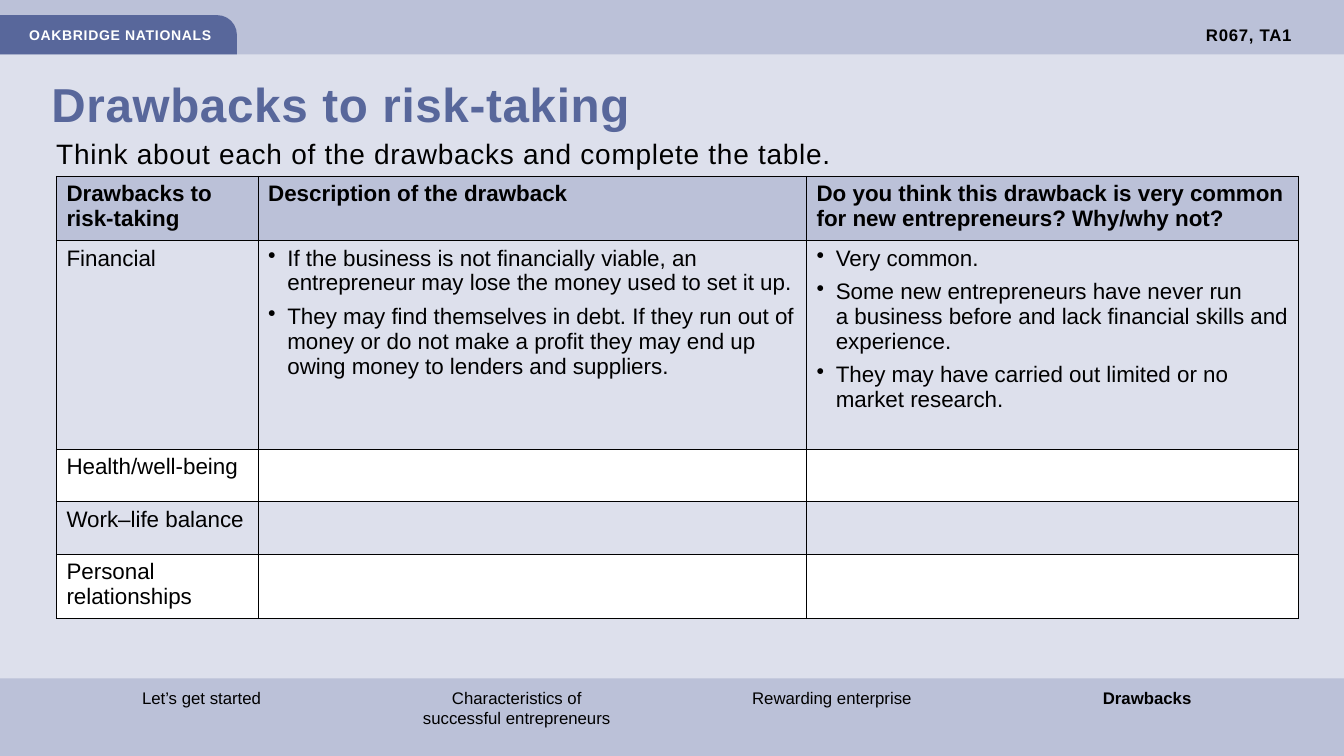
"""Builds the slide on the drawbacks to risk-taking."""
from dataclasses import dataclass

from lxml import etree
from pptx import Presentation
from pptx import util as u
from pptx.dml.color import RGBColor
from pptx.enum import shapes, text
from pptx.oxml.ns import qn


@dataclass(frozen=True)
class Theme:
    """Colours, font and type sizes."""
    page: str = "DDE0EC"
    band: str = "BBC1D8"
    accent: str = "58679B"
    ink: str = "000000"
    white: str = "FFFFFF"
    font: str = "Arial"
    title: int = 34
    lead: int = 20
    table: int = 16
    label: int = 12
    tab: int = 10
    spacing: float = 0.5
    border: int = 1


THEME = Theme()
LEFT, CENTER, RIGHT = text.PP_ALIGN.LEFT, text.PP_ALIGN.CENTER, text.PP_ALIGN.RIGHT


def write(frame, *lines, size, color=THEME.ink, bold=False, align=LEFT, indent=0, hanging=0,
          bullet=None, line_spacing=None, before=None, after=None, spacing=0):
    """Fill a text frame with one formatted paragraph per line."""
    for number, line in enumerate(lines):
        paragraph = frame.add_paragraph() if number else frame.paragraphs[0]
        paragraph.text = line
        paragraph.alignment = align
        paragraph.line_spacing = line_spacing
        paragraph.space_before = None if before is None else u.Pt(before)
        paragraph.space_after = None if after is None else u.Pt(after)
        properties = paragraph._p.get_or_add_pPr()
        properties.set("marL", str(u.Inches(indent)))
        properties.set("indent", str(u.Inches(-hanging)))
        if bullet:
            etree.SubElement(properties, qn("a:buChar")).set("char", bullet)
        for run in paragraph.runs:
            run.font.name = THEME.font
            run.font.size = u.Pt(size)
            run.font.bold = bold
            run.font.color.rgb = RGBColor.from_string(color)
            if spacing:
                run._r.get_or_add_rPr().set("spc", str(round(spacing * 100)))


class SlideBuilder:
    """Holds the theme and the current slide."""

    def __init__(self, deck, theme):
        """Add a title-only slide with the page colour."""
        self.theme = theme
        self.slide = deck.slides.add_slide(deck.slide_layouts[5])
        self.paint(self.slide.background.fill, theme.page)

    def paint(self, fill, color):
        """Make a fill solid."""
        fill.solid()
        fill.fore_color.rgb = RGBColor.from_string(color)

    def block(self, kind, box, color):
        """Add a filled shape without an outline."""
        shape = self.slide.shapes.add_shape(kind, *map(u.Inches, box))
        shape.shadow.inherit = False
        self.paint(shape.fill, color)
        shape.line.fill.background()
        return shape

    def title(self, words, box):
        """Place and format the title placeholder."""
        heading = self.slide.shapes.title
        heading.left, heading.top, heading.width, heading.height = map(u.Inches, box)
        frame = heading.text_frame
        frame.vertical_anchor = text.MSO_ANCHOR.TOP
        frame.auto_size = text.MSO_AUTO_SIZE.NONE
        write(frame, words, size=self.theme.title, color=self.theme.accent, bold=True,
              line_spacing=1.1, spacing=self.theme.spacing)

    def label(self, words, box, anchor=text.MSO_ANCHOR.TOP, **style):
        """Add a wrapping text box."""
        frame = self.slide.shapes.add_textbox(*map(u.Inches, box)).text_frame
        frame.word_wrap = True
        frame.vertical_anchor = anchor
        write(frame, words, **style)

    def outline(self, cell):
        """Draw the four borders of a table cell."""
        properties = cell._tc.get_or_add_tcPr()
        for position, side in enumerate(("a:lnL", "a:lnR", "a:lnT", "a:lnB")):
            edge = etree.Element(qn(side), w=str(u.Pt(self.theme.border)))
            fill = etree.SubElement(edge, qn("a:solidFill"))
            etree.SubElement(fill, qn("a:srgbClr")).set("val", self.theme.ink)
            properties.insert(position, edge)

    def table(self, rows, box, widths, heights, fills):
        """Add a bordered table; a cell given as a list is bulleted."""
        grid = self.slide.shapes.add_table(len(rows), len(widths), *map(u.Inches, box)).table
        for column, width in zip(grid.columns, widths):
            column.width = u.Inches(width)
        for row, height in zip(grid.rows, heights):
            row.height = u.Inches(height)
        for r, entries in enumerate(rows):
            for c, entry in enumerate(entries):
                cell = grid.cell(r, c)
                self.paint(cell.fill, fills[r])
                self.outline(cell)
                if isinstance(entry, list):
                    write(cell.text_frame, *entry, size=self.theme.table, indent=0.19,
                          hanging=0.19, bullet="•", after=6)
                else:
                    write(cell.text_frame, entry, size=self.theme.table, bold=r == 0)


DRAWBACKS = [
    ("Drawbacks to risk-taking", "Description of the drawback",
     "Do you think this drawback is very common for new entrepreneurs? Why/why not?"),
    ("Financial",
     ["If the business is not financially viable, an entrepreneur may lose the money used "
      "to set it up.",
      "They may find themselves in debt. If they run out of money or do not make a profit "
      "they may end up owing money to lenders and suppliers."],
     ["Very common.",
      "Some new entrepreneurs have never run \va business before and lack financial skills "
      "and experience.",
      "They may have carried out limited or no market research."]),
    ("Health/well-being", "", ""),
    ("Work–life balance", "", ""),
    ("Personal relationships", "", ""),
]
SECTIONS = ["Let’s get started", "Characteristics of successful entrepreneurs",
            "Rewarding enterprise", "Drawbacks"]


def main():
    """Build and save the deck."""
    deck = Presentation()
    deck.slide_width, deck.slide_height = u.Inches(13.33), u.Inches(7.5)
    page = SlideBuilder(deck, THEME)
    middle = text.MSO_ANCHOR.MIDDLE

    page.block(shapes.MSO_SHAPE.RECTANGLE, (-0.01, 0, 13.35, 0.54), THEME.band)
    page.block(shapes.MSO_SHAPE.RECTANGLE, (0, 6.73, 13.35, 0.77), THEME.band)
    tab = page.block(shapes.MSO_SHAPE.ROUND_1_RECTANGLE, (-0.01, 0.15, 2.36, 0.39), THEME.accent)
    tab.adjustments[0] = 0.5
    page.label("OAKBRIDGE NATIONALS", (-0.01, 0.15, 2.6, 0.39), middle, size=THEME.tab,
               color=THEME.white, bold=True, indent=0.2, spacing=THEME.spacing)
    page.label("R067, TA1", (10.31, 0.15, 2.6, 0.39), middle, size=THEME.label, bold=True,
               align=RIGHT, spacing=THEME.spacing)

    page.title("Drawbacks to risk-taking", (0.41, 0.64, 6.88, 0.74))
    page.table(DRAWBACKS, (0.56, 1.75, 12.32, 4.38), widths=(2, 5.44, 4.88),
               heights=(0.64, 2.07, 0.52, 0.52, 0.64),
               fills=(THEME.band, THEME.page, THEME.white, THEME.page, THEME.white))
    page.label("Think about each of the drawbacks and complete the table.",
               (0.41, 1.27, 12.74, 0.57), size=THEME.lead, indent=0.05, line_spacing=1.1,
               before=10, spacing=THEME.spacing)

    for number, section in enumerate(SECTIONS):
        page.label(section, (0.89 + 3.126 * number, 6.77, 2.17, 0.5), size=THEME.label,
                   bold=section == SECTIONS[-1], align=CENTER, indent=0.05)

    deck.save("out.pptx")


if __name__ == "__main__":
    main()
